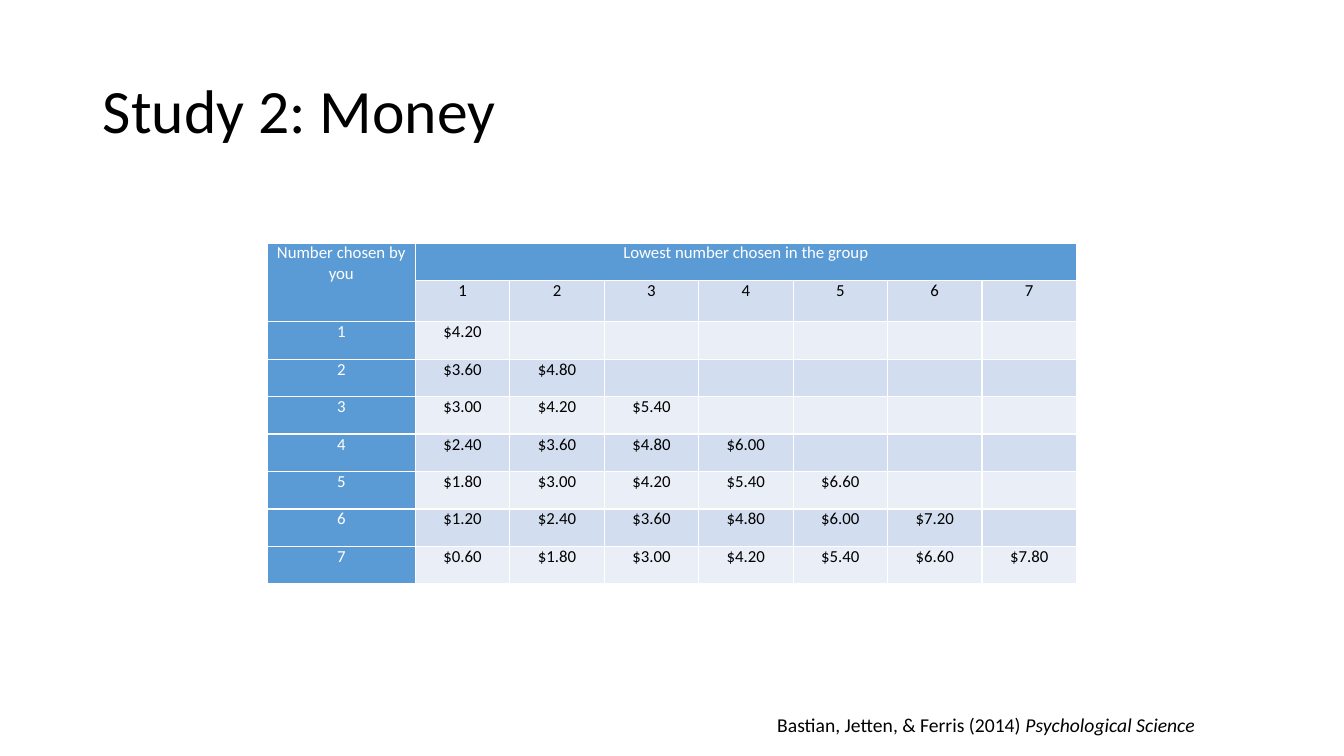
from lxml import etree
from pptx import Presentation, util as u
from pptx.dml.color import RGBColor
from pptx.enum import text
from pptx.oxml.ns import qn

WIDTH, HEIGHT = 13.33, 7.5
FONT = "Calibri"
BLACK, WHITE = "000000", "FFFFFF"
HEADER, BAND_DARK, BAND_LIGHT = "5B9BD5", "D2DEEF", "EAEFF7"
CHOICES = range(1, 8)
LABEL_WIDTH, COLUMN_WIDTH = 1.47, 0.937
ROW_HEIGHT, NUMBER_ROW_HEIGHT = 0.372, 0.41


def color(hex_string):
    return RGBColor.from_string(hex_string)


def place(shape, left, top, width, height):
    shape.left, shape.top = u.Inches(left), u.Inches(top)
    shape.width, shape.height = u.Inches(width), u.Inches(height)


def add_run(paragraph, words, size, hex_string=BLACK, italic=None):
    run = paragraph.add_run()
    run.text = words
    run.font.name, run.font.size = FONT, u.Pt(size)
    run.font.color.rgb = color(hex_string)
    run.font.italic = italic


def add_title(slide, words):
    title = slide.shapes.title
    place(title, 0.92, 0.4, WIDTH - 2 * 0.915, 1.45)
    title.text_frame.vertical_anchor = text.MSO_ANCHOR.MIDDLE
    paragraph = title.text_frame.paragraphs[0]
    paragraph.alignment = text.PP_ALIGN.LEFT
    paragraph.line_spacing = 0.9
    add_run(paragraph, words, 44)


def add_borders(cell, hex_string, points):
    properties = cell._tc.get_or_add_tcPr()
    for side in ("lnL", "lnR", "lnT", "lnB"):
        line = etree.SubElement(properties, qn("a:" + side), w=str(u.Pt(points)))
        fill = etree.SubElement(line, qn("a:solidFill"))
        etree.SubElement(fill, qn("a:srgbClr"), val=hex_string)


def format_cell(cell, words, fill, font_color):
    cell.margin_left = cell.margin_right = u.Inches(0.07)
    cell.margin_top = cell.margin_bottom = 0
    add_borders(cell, WHITE, 1)
    cell.fill.solid()
    cell.fill.fore_color.rgb = color(fill)
    if words:
        paragraph = cell.text_frame.paragraphs[0]
        paragraph.alignment = text.PP_ALIGN.CENTER
        add_run(paragraph, words, 12, font_color)


def payoff(chosen, lowest):
    """Dollars earned; the lowest number cannot exceed your own."""
    if lowest > chosen:
        return ""
    return f"${4.2 - 0.6 * (chosen - 1) + 1.2 * (lowest - 1):.2f}"


def payoff_rows():
    blanks = [""] * (len(CHOICES) - 1)
    rows = [["Number chosen by you", "Lowest number chosen in the group"] + blanks,
            [""] + [str(lowest) for lowest in CHOICES]]
    for chosen in CHOICES:
        rows.append([str(chosen)] + [payoff(chosen, lowest) for lowest in CHOICES])
    return rows


def add_payoff_table(slide, left, top):
    rows = payoff_rows()
    row_count, column_count = len(rows), len(rows[0])
    frame = slide.shapes.add_table(
        row_count, column_count, u.Inches(left), u.Inches(top),
        u.Inches(LABEL_WIDTH + len(CHOICES) * COLUMN_WIDTH),
        u.Inches(ROW_HEIGHT * (row_count - 1) + NUMBER_ROW_HEIGHT))
    table = frame.table

    # Grid sizes
    for index, column in enumerate(table.columns):
        column.width = u.Inches(COLUMN_WIDTH if index else LABEL_WIDTH)
    for index, row in enumerate(table.rows):
        row.height = u.Inches(NUMBER_ROW_HEIGHT if index == 1 else ROW_HEIGHT)

    # Headers along the top and left, bands elsewhere
    for row, values in enumerate(rows):
        for column, words in enumerate(values):
            is_header = row == 0 or column == 0
            band = BAND_DARK if row % 2 else BAND_LIGHT
            format_cell(table.cell(row, column), words,
                        HEADER if is_header else band,
                        WHITE if is_header else BLACK)
    table.cell(0, 0).merge(table.cell(1, 0))
    table.cell(0, 1).merge(table.cell(0, column_count - 1))


def add_citation(slide, authors, journal):
    box = slide.shapes.add_textbox(0, 0, 0, 0)
    place(box, 7.61, 7.02, 4.62, 0.34)
    box.text_frame.word_wrap = True
    paragraph = box.text_frame.paragraphs[0]
    add_run(paragraph, authors, 14)
    add_run(paragraph, journal, 14, italic=True)


def main():
    presentation = Presentation()
    presentation.slide_width = u.Inches(WIDTH)
    presentation.slide_height = u.Inches(HEIGHT)
    slide = presentation.slides.add_slide(presentation.slide_layouts[5])
    add_title(slide, "Study 2: Money")
    add_payoff_table(slide, 2.65, 2.41)
    add_citation(slide, "Bastian, Jetten, & Ferris (2014) ", "Psychological Science")
    presentation.save("out.pptx")


if __name__ == "__main__":
    main()
